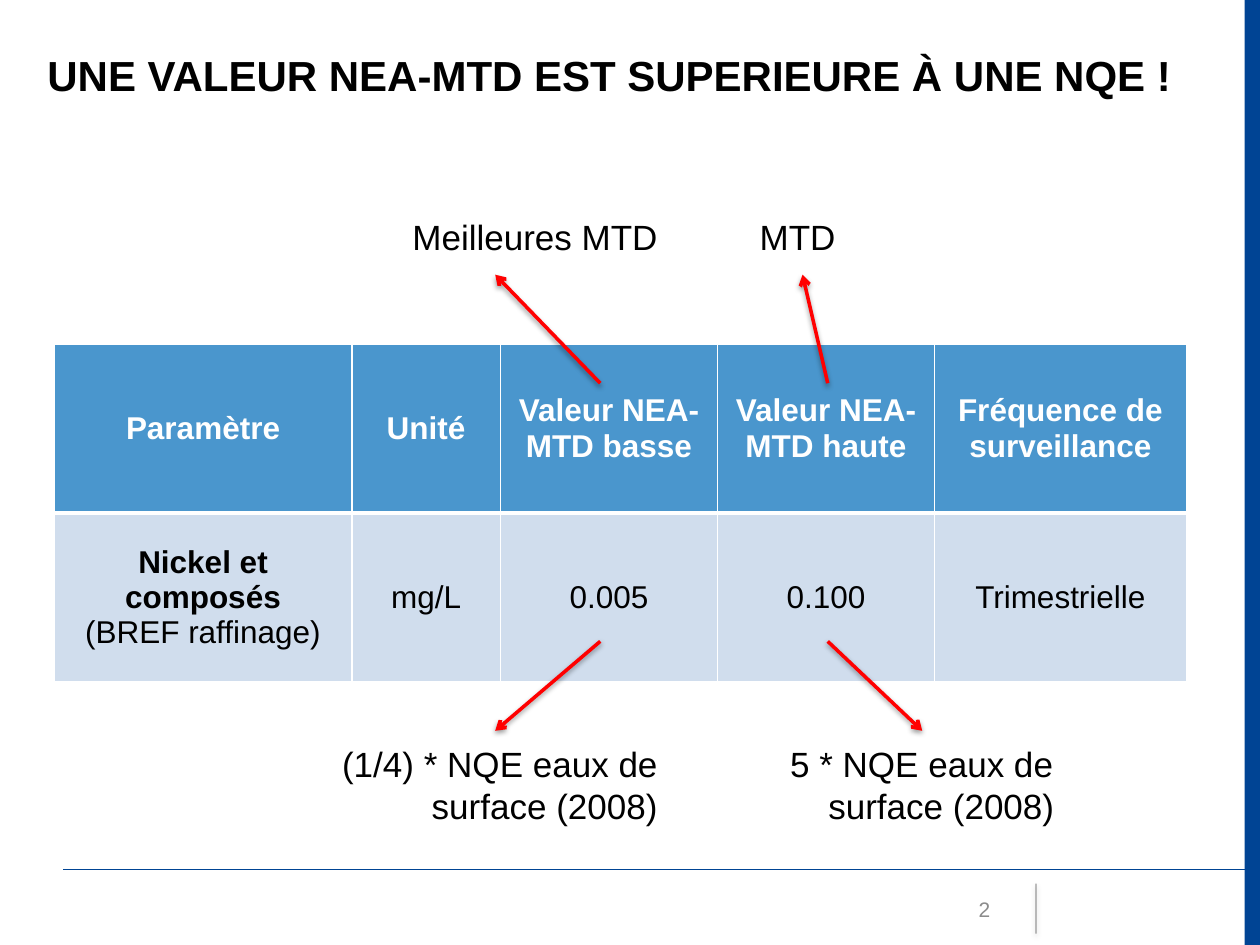
from lxml.etree import SubElement
from pptx import Presentation
from pptx.dml.color import RGBColor
from pptx.enum.shapes import MSO_CONNECTOR as CONN, MSO_SHAPE as SHAPE
from pptx.enum.text import MSO_ANCHOR as ANCHOR, PP_ALIGN as ALIGN
from pptx.oxml.ns import qn
from pptx.util import Pt

BLUE = RGBColor(0x00, 0x44, 0x94)
HEADER = RGBColor(0x4A, 0x96, 0xCD)
BODY = RGBColor(0xD0, 0xDD, 0xED)
RED = RGBColor(0xFF, 0x00, 0x00)
GRAY = RGBColor(0x8C, 0x8C, 0x8C)
BLACK = RGBColor(0x00, 0x00, 0x00)
WHITE = RGBColor(0xFF, 0xFF, 0xFF)

HEADINGS = ["Paramètre", "Unité", "Valeur NEA-MTD basse",
            "Valeur NEA-MTD haute", "Fréquence de surveillance"]
VALUES = ["", "mg/L", "0.005", "0.100", "Trimestrielle"]
COL_WIDTHS = [170, 85, 124, 124, 144]
ROW_HEIGHT = 96.5


def write(tf, text, size=18, color=BLACK, bold=False, align=ALIGN.LEFT, hanging=0):
    """Write one paragraph and return it."""
    p = tf.paragraphs[0]
    p.alignment = align
    if hanging:
        pPr = p._p.get_or_add_pPr()
        pPr.set("marL", str(Pt(hanging)))
        pPr.set("indent", str(-Pt(hanging)))
    add_run(p, text, size, color, bold)
    return p


def add_run(p, text, size, color, bold):
    r = p.add_run()
    r.text = text
    r.font.name = "Arial"
    r.font.size = Pt(size)
    r.font.bold = bold
    r.font.color.rgb = color


def add_text(s, text, x, y, w, h, top=6.6, anchor=ANCHOR.TOP, **fmt):
    tf = s.shapes.add_textbox(Pt(x), Pt(y), Pt(w), Pt(h)).text_frame
    tf.word_wrap = True
    tf.margin_top = Pt(top)
    tf.vertical_anchor = anchor
    write(tf, text, **fmt)


def add_line(s, x1, y1, x2, y2, color, width, alpha=100, arrow=False, shadow=True):
    c = s.shapes.add_connector(CONN.STRAIGHT, Pt(x1), Pt(y1), Pt(x2), Pt(y2))
    c.line.color.rgb = color
    c.line.width = Pt(width)
    spPr = c._element.spPr
    ln = spPr.find(qn("a:ln"))
    if alpha < 100:
        add_alpha(ln.find(".//" + qn("a:srgbClr")), alpha)
    if arrow:
        SubElement(ln, qn("a:tailEnd"), type="arrow")
    effects = SubElement(spPr, qn("a:effectLst"))
    if shadow:
        outer = SubElement(effects, qn("a:outerShdw"), blurRad=str(Pt(3.1)),
                           dist=str(Pt(1.6)), dir="5400000", rotWithShape="0")
        add_alpha(SubElement(outer, qn("a:srgbClr"), val=str(BLACK)), 38)


def add_alpha(clr, percent):
    SubElement(clr, qn("a:alpha"), val=str(percent * 1000))


def style_cell(cell, fill, top, bottom):
    tcPr = cell._tc.get_or_add_tcPr()
    for side, width in (("L", 1), ("R", 1), ("T", top), ("B", bottom)):
        ln = SubElement(tcPr, qn("a:ln" + side), w=str(Pt(width)))
        solid = SubElement(ln, qn("a:solidFill"))
        SubElement(solid, qn("a:srgbClr"), val=str(WHITE))
    cell.fill.solid()
    cell.fill.fore_color.rgb = fill
    cell.vertical_anchor = ANCHOR.MIDDLE


def add_values_table(s):
    table = s.shapes.add_table(2, len(COL_WIDTHS), Pt(31), Pt(196.6),
                               Pt(sum(COL_WIDTHS)), Pt(2 * ROW_HEIGHT)).table
    for row in table.rows:
        row.height = Pt(ROW_HEIGHT)
    for i, width in enumerate(COL_WIDTHS):
        table.columns[i].width = Pt(width)
        head, value = table.cell(0, i), table.cell(1, i)
        style_cell(head, HEADER, top=1, bottom=3)
        style_cell(value, BODY, top=3, bottom=1)
        write(head.text_frame, HEADINGS[i], color=WHITE, bold=True, align=ALIGN.CENTER)
        if VALUES[i]:
            write(value.text_frame, VALUES[i], align=ALIGN.CENTER)
    # The parameter name is bold, its source is not
    p = write(table.cell(1, 0).text_frame, "Nickel et composés", bold=True,
              align=ALIGN.CENTER)
    p.add_line_break()
    add_run(p, "(BREF raffinage)", 18, BLACK, False)


def add_frame(s):
    bar = s.shapes.add_shape(SHAPE.RECTANGLE, Pt(711.2), 0, Pt(8.8), Pt(540))
    bar.shadow.inherit = False
    bar.fill.solid()
    bar.fill.fore_color.rgb = BLUE
    bar.line.fill.background()
    add_line(s, 36, 497, 720, 497, BLUE, 0.75, shadow=False)
    add_line(s, 592, 505, 592, 533.5, BLACK, 0.5, alpha=70)


def main():
    prs = Presentation()
    prs.slide_width, prs.slide_height = Pt(720), Pt(540)
    s = prs.slides.add_slide(prs.slide_layouts[6])

    # Frame, title and page number
    add_frame(s)
    add_text(s, "UNE VALEUR NEA-MTD EST SUPERIEURE À UNE NQE !",
             20, 21.6, 684, 50, size=24, bold=True)
    add_text(s, "2", 516, 505, 57, 28.5, top=3.6, anchor=ANCHOR.MIDDLE,
             size=12, color=GRAY, align=ALIGN.RIGHT)

    add_values_table(s)

    # Notes above and below the two value columns
    for text, x, y, w, h, align in (
            ("Meilleures MTD", 183.6, 116.6, 199.4, 39.6, ALIGN.RIGHT),
            ("MTD", 427, 116.6, 63.4, 39.6, ALIGN.LEFT),
            ("(1/4) * NQE eaux de surface (2008)", 183.6, 417.6, 199.4, 62.6, ALIGN.RIGHT),
            ("5 * NQE eaux de surface (2008)", 427, 417.6, 199.4, 62.6, ALIGN.CENTER)):
        add_text(s, text, x, y, w, h, size=20, align=align, hanging=22.5)

    # Arrows from the value columns to their notes
    low, high = 343, 473
    for x1, y1, x2, y2 in ((low, 366.5, 283, 417.6), (high, 366.5, 527, 417.6),
                           (low, 219, 283, 157), (high, 219, 458.6, 157)):
        add_line(s, x1, y1, x2, y2, RED, 2, arrow=True)

    prs.save("out.pptx")


if __name__ == "__main__":
    main()
